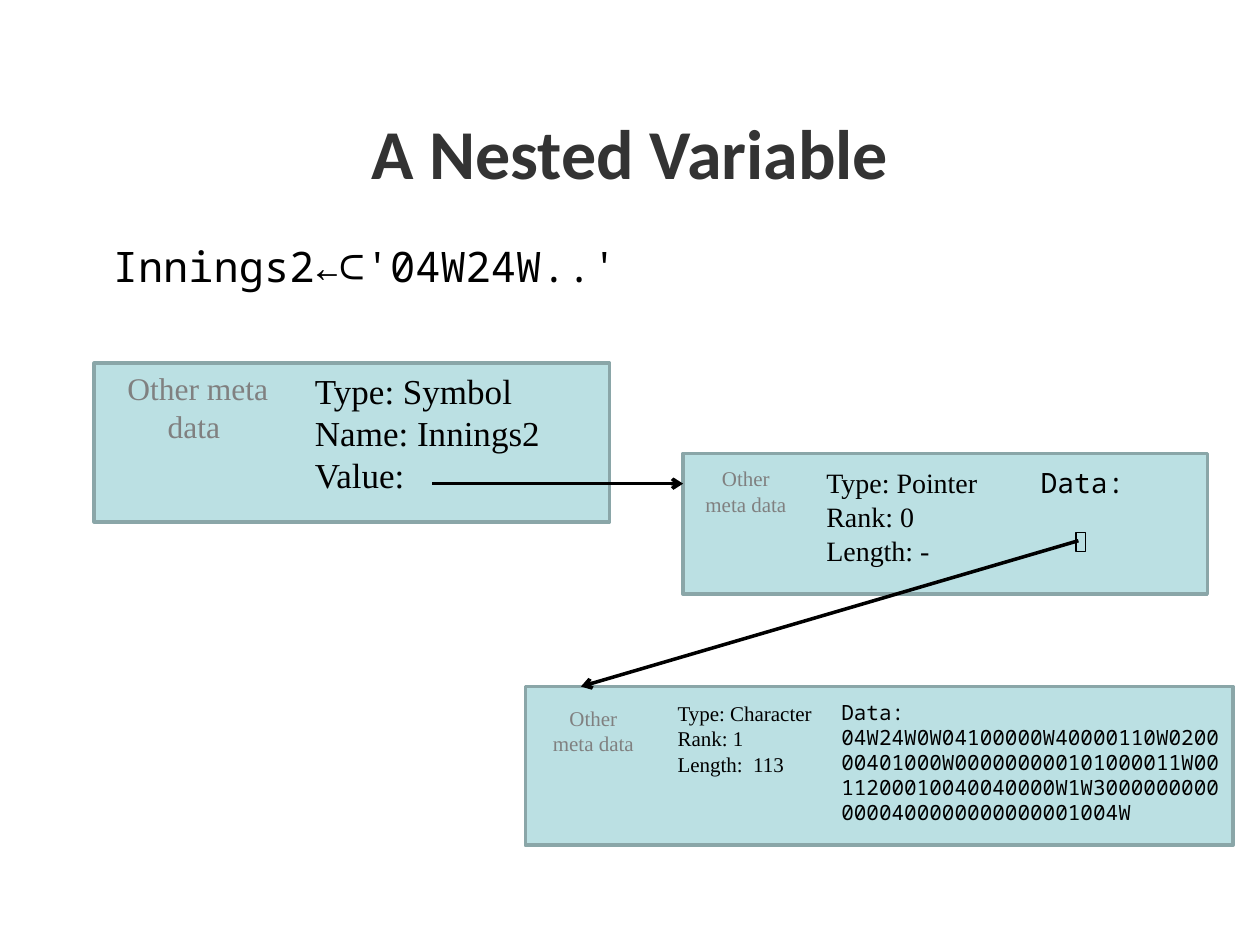
from pptx import Presentation
from pptx.dml.color import RGBColor
from pptx.enum.shapes import MSO_CONNECTOR, MSO_SHAPE
from pptx.enum.text import MSO_ANCHOR, PP_ALIGN
from pptx.oxml.ns import qn
from pptx.util import Cm, Pt
from lxml import etree

BLACK = RGBColor(0x00, 0x00, 0x00)
GREY = RGBColor(0x80, 0x80, 0x80)
DARK_GREY = RGBColor(0x33, 0x33, 0x33)
PALE_TEAL = RGBColor(0xBB, 0xE0, 0xE3)
TEAL_GREY = RGBColor(0x8A, 0xA6, 0xA8)
SERIF, MONO = "Times New Roman", "Noto Sans Mono"

TITLE = ["A Nested Variable"]
TITLE_AREA = (1.27, 1.96, 22.86, 2.18)
TITLE_FORMAT = {"size": Pt(40), "name": "Calibri", "bold": True}

CODE = ["Innings2←⊂'04W24W..'"]
CODE_AREA = (1.4, 4.72, 11.91, 1.27)

META = ["Other ", "meta data "]
CELLS = [
    {
        "area": (1.9, 7.32, 10.39, 3.2),
        "meta": (["Other meta data "], (2.31, 7.32, 3.36, 1.8), 18),
        "fields": (["Type: Symbol", "Name: Innings2", "Value:"], (6.1, 7.32, 5.99, 2.82), 20),
    },
    {
        "area": (10.59, 13.84, 14.27, 3.2),
        "meta": (META, (10.72, 14.1, 2.59, 1.27), 12),
        "fields": (["Type: Character", "Rank: 1", "Length:  113"], (13.41, 14, 3.58, 1.8), 12),
        "data": (
            ["Data:",
             "04W24W0W04100000W40000110W020000401000W000000000101000011W00"
             "11200010040040000W1W30000000000000400000000000001004W"],
            (16.71, 13.97, 8.14, 2.82), 12),
    },
    {
        "area": (13.77, 9.14, 10.57, 2.84),
        "meta": (META, (13.77, 9.27, 2.64, 1.27), 12),
        "fields": (["Type: Pointer", "Rank: 0", "Length: -"], (16.41, 9.27, 3.89, 2.31), 16),
        "data": (["Data:"], (20.73, 9.27, 2.84, 0.94), 16),
        "pointer": (21.69, 10.74, 0.2, 0.38),
    },
]
PART_STYLES = {
    "meta": (SERIF, GREY, PP_ALIGN.CENTER),
    "fields": (SERIF, BLACK, PP_ALIGN.LEFT),
    "data": (MONO, BLACK, PP_ALIGN.LEFT),
}
ARROWS = [(21.74, 10.9, 11.71, 13.84), (8.71, 9.75, 13.77, 9.75)]


def lengths(values):
    return [Cm(value) for value in values]


def write(text_frame, lines, font_format, color, alignment):
    text_frame.word_wrap = True
    text_frame.text = "\n".join(lines)
    for paragraph in text_frame.paragraphs:
        paragraph.alignment = alignment
        for attribute, value in font_format.items():
            setattr(paragraph.font, attribute, value)
        paragraph.font.color.rgb = color


def add_text(shapes, lines, area, size, font, color, alignment):
    text_box = shapes.add_textbox(*lengths(area))
    write(text_box.text_frame, lines, {"size": Pt(size), "name": font}, color, alignment)


def add_rectangle(shapes, area, line_color, line_width):
    shape = shapes.add_shape(MSO_SHAPE.RECTANGLE, *lengths(area))
    shape.shadow.inherit = False
    shape.fill.solid()
    shape.fill.fore_color.rgb = PALE_TEAL
    shape.line.color.rgb = line_color
    shape.line.width = Pt(line_width)


def add_cell(slide, cell):
    shapes = slide.shapes.add_group_shape().shapes
    add_rectangle(shapes, cell["area"], TEAL_GREY, 2)
    for part, style in PART_STYLES.items():
        if part in cell:
            add_text(shapes, *cell[part], *style)
    if "pointer" in cell:
        add_rectangle(shapes, cell["pointer"], BLACK, 0.75)


def add_arrow(slide, ends):
    connector = slide.shapes.add_connector(MSO_CONNECTOR.STRAIGHT, *lengths(ends))
    connector.line.color.rgb = BLACK
    connector.line.width = Pt(2)
    etree.SubElement(connector.line._get_or_add_ln(), qn("a:tailEnd"), type="arrow")
    etree.SubElement(connector._element.spPr, qn("a:effectLst"))


def main():
    presentation = Presentation()
    presentation.slide_width, presentation.slide_height = Cm(25.4), Cm(19.05)
    slide = presentation.slides.add_slide(presentation.slide_layouts[5])

    title = slide.shapes.title
    title.left, title.top, title.width, title.height = lengths(TITLE_AREA)
    title.text_frame.vertical_anchor = MSO_ANCHOR.MIDDLE
    write(title.text_frame, TITLE, TITLE_FORMAT, DARK_GREY, PP_ALIGN.CENTER)

    add_text(slide.shapes, CODE, CODE_AREA, 24, MONO, BLACK, PP_ALIGN.CENTER)
    for cell in CELLS:
        add_cell(slide, cell)
    for ends in ARROWS:
        add_arrow(slide, ends)

    presentation.save("out.pptx")


if __name__ == "__main__":
    main()
